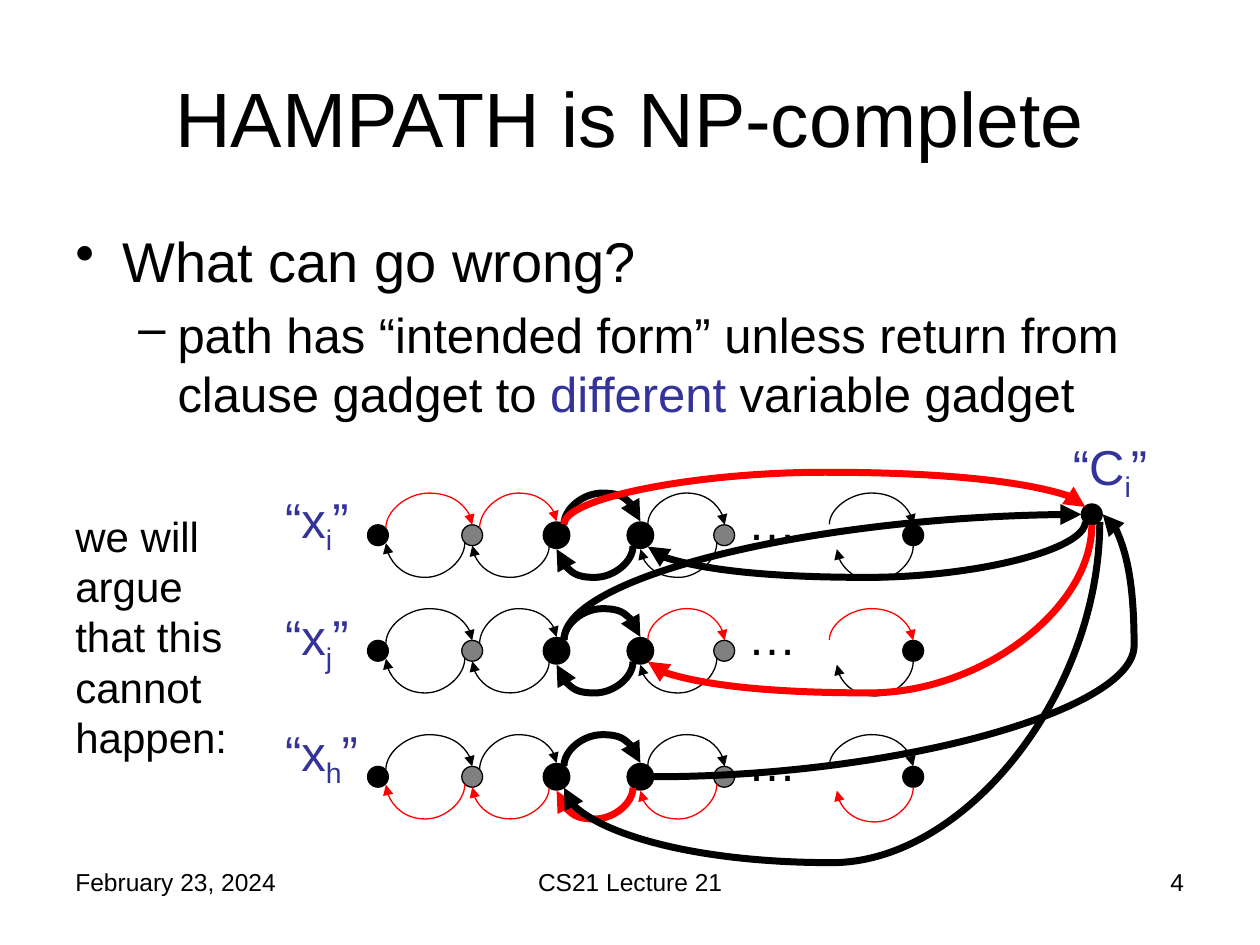
from lxml import etree
from pptx import Presentation
from pptx.dml.color import RGBColor
from pptx.enum.shapes import MSO_CONNECTOR, MSO_SHAPE
from pptx.enum.text import MSO_ANCHOR, PP_ALIGN
from pptx.oxml.ns import qn
from pptx.util import Cm, Pt

CURVE = MSO_CONNECTOR.CURVE
OVAL = MSO_SHAPE.OVAL
MIDDLE = MSO_ANCHOR.MIDDLE
LEFT, CENTER, RIGHT = PP_ALIGN.LEFT, PP_ALIGN.CENTER, PP_ALIGN.RIGHT
BLACK, GRAY, RED, BLUE = "000000", "808080", "FF0000", "333399"
THIN, THICK = 0.75, 4
NODE_SIZE = 0.42

presentation = Presentation()
presentation.slide_width = Cm(25.4)
presentation.slide_height = Cm(19.05)
slide = presentation.slides.add_slide(presentation.slide_layouts[6])


def add_text(box, paragraphs, align=LEFT):
    shape = slide.shapes.add_textbox(*[Cm(length) for length in box])
    text_frame = shape.text_frame
    text_frame.word_wrap = True
    for index, (size, runs) in enumerate(paragraphs):
        paragraph = text_frame.add_paragraph() if index else text_frame.paragraphs[0]
        paragraph.alignment = align
        for text, color in runs:
            run = paragraph.add_run()
            run.text = text
            run.font.name = "Arial"
            run.font.size = Pt(size)
            run.font.color.rgb = RGBColor.from_string(color)
    return text_frame


def add_curve(start, end, bend, color, width, sideways=False):
    (x1, y1), (x2, y2) = start, end
    if sideways:
        corners = (x1, y1, x2, y2)
        ratio = (bend - x1) / (x2 - x1)
    else:
        half_width, half_height = abs(y2 - y1) / 2, abs(x2 - x1) / 2
        middle_x, middle_y = (x1 + x2) / 2, (y1 + y2) / 2
        corners = (middle_x - half_width, middle_y - half_height,
                   middle_x + half_width, middle_y + half_height)
        ratio = (bend - y1) / (y2 - y1) if bend is not None else None
    connector = slide.shapes.add_connector(CURVE, *[Cm(length) for length in corners])
    connector.line.color.rgb = RGBColor.from_string(color)
    connector.line.width = Pt(width)
    properties = connector._element.spPr
    if not sideways:
        frame = properties.find(qn("a:xfrm"))
        frame.set("rot", str((90 if y2 > y1 else 270) * 60000))
        if (y2 > y1) == (x2 > x1):
            frame.set("flipV", "1")
    geometry = properties.find(qn("a:prstGeom"))
    if ratio is None:
        geometry.set("prst", "curvedConnector2")
    else:
        adjustments = geometry.find(qn("a:avLst"))
        etree.SubElement(adjustments, qn("a:gd"), name="adj1",
                         fmla=f"val {round(ratio * 100000)}")
    etree.SubElement(properties.find(qn("a:ln")), qn("a:tailEnd"), type="triangle")
    etree.SubElement(properties, qn("a:effectLst"))


footers = [
    (1.27, 5.92, "February 23, 2024", LEFT),
    (8.68, 8.05, "CS21 Lecture 21", CENTER),
    (18.2, 5.92, "4", RIGHT),
]
for left, width, text, align in footers:
    add_text((left, 17.36, width, 1.32), [(14, [(text, BLACK)])], align)

title = add_text((1.27, 0.76, 22.86, 3.18),
                 [(44, [("HAMPATH is NP-complete", BLACK)])], CENTER)
title.vertical_anchor = MIDDLE

body = add_text((1.27, 4.45, 22.86, 12.7), [
    (32, [("What can go wrong?", BLACK)]),
    (28, [("path has “intended form” unless return from clause gadget to ", BLACK),
          ("different", BLUE), (" variable gadget", BLACK)]),
])
bullets = [("•", 0.95, 0.95), ("–", 2.06, 0.79)]
for paragraph, (bullet, margin, hanging) in zip(body.paragraphs, bullets):
    paragraph.space_before = Pt(6)
    properties = paragraph._p.get_or_add_pPr()
    properties.set("marL", str(Cm(margin)))
    properties.set("indent", str(-Cm(hanging)))
    etree.SubElement(properties, qn("a:buChar"), char=bullet)

nodes = [
    (7.41, BLACK, THIN),
    (9.31, GRAY, THIN),
    (11.01, BLACK, THICK),
    (12.7, BLACK, THICK),
    (18.2, BLACK, THIN),
    (14.39, GRAY, THIN),
]
arcs = [
    (7.78, 0.06, 9.52, 0, -0.64, THIN),
    (9.67, 0.06, 11.22, -0.07, -0.64, THIN),
    (11.37, -0.01, 12.91, -0.07, -0.64, THICK),
    (13.06, -0.01, 14.61, 0, -0.64, THIN),
    (16.72, -0.01, 18.41, 0, -0.64, THIN),
    (9.37, 0.36, 7.78, 0.37, 1.06, THIN),
    (11.07, 0.43, 9.52, 0.42, 1.06, THIN),
    (12.76, 0.43, 11.22, 0.49, 1.06, THICK),
    (14.45, 0.36, 12.91, 0.49, 1.06, THIN),
    (18.41, 0.42, 16.87, 0.49, 1.12, THIN),
]
variable_rows = [(10.58, {0, 1}), (12.91, {3, 4}), (15.45, {5, 6, 7, 8, 9})]
clause_node = (21.8, 10.16, BLACK, THIN)

ovals = []
for top, red_arcs in variable_rows:
    ovals += [(left, top, color, width) for left, color, width in nodes]
ovals.append(clause_node)
for left, top, color, width in ovals:
    shape = slide.shapes.add_shape(OVAL, Cm(left), Cm(top), Cm(NODE_SIZE), Cm(NODE_SIZE))
    shape.shadow.inherit = False
    shape.fill.solid()
    shape.fill.fore_color.rgb = RGBColor.from_string(color)
    shape.line.color.rgb = RGBColor.from_string(BLACK)
    shape.line.width = Pt(width)

for top, red_arcs in variable_rows:
    for index, (x1, y1, x2, y2, bend, width) in enumerate(arcs):
        color = RED if index in red_arcs else BLACK
        add_curve((x1, top + y1), (x2, top + y2), top + bend, color, width)
    add_text((14.82, top - 0.8, 1.9, 1.45), [(28, [("…", BLACK)])])

labels = [
    (5.5, 9.74, "x", "i"),
    (5.5, 12.11, "x", "j"),
    (5.5, 14.44, "x", "h"),
    (21.38, 8.68, "C", "i"),
]
for left, top, name, subscript in labels:
    label = add_text((left, top, 2.33, 1.45),
                     [(28, [("“" + name, BLUE), (subscript, BLUE), ("”", BLUE)])])
    label.paragraphs[0].runs[1].font._element.set("baseline", "-25000")

add_curve((11.37, 10.57), (21.88, 10.22), 9.52, RED, THICK)
add_curve((21.88, 10.52), (13.06, 11.02), 11.64, BLACK, THICK)
add_curve((11.37, 12.9), (21.8, 10.37), None, BLACK, THICK)
add_curve((22.01, 10.58), (13.06, 13.34), 13.97, RED, THICK)
add_curve((13.18, 15.66), (22.23, 10.37), 22.86, BLACK, THICK, sideways=True)
add_curve((22.17, 10.52), (11.37, 15.88), 17.39, BLACK, THICK)

add_text((1.27, 10.16, 3.81, 5.33),
         [(24, [("we will argue that this cannot happen:", BLACK)])])

presentation.save("out.pptx")
